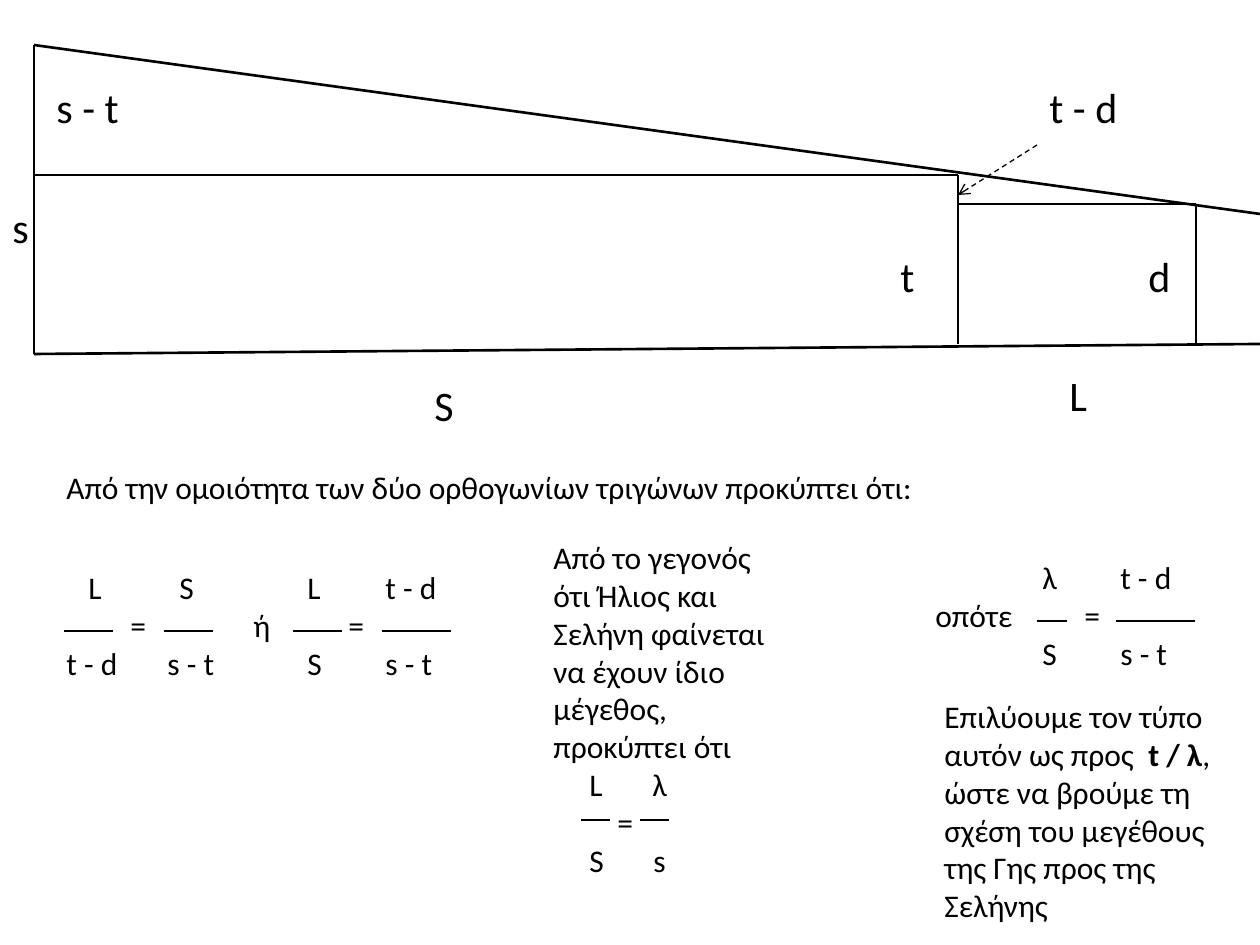
from lxml import etree
from pptx import Presentation
from pptx.dml.color import RGBColor
from pptx.enum.dml import MSO_LINE
from pptx.enum.shapes import MSO_CONNECTOR
from pptx.enum.text import MSO_AUTO_SIZE
from pptx.oxml.ns import qn
from pptx.util import Emu, Pt

STRAIGHT = MSO_CONNECTOR.STRAIGHT
DASH = MSO_LINE.DASH
FIT_TEXT = MSO_AUTO_SIZE.SHAPE_TO_FIT_TEXT
BLACK = RGBColor(0, 0, 0)
FONT = "Calibri"
BODY_SIZE = 18
LABEL_SIZE = 24


def px(length):
    """Turn slide pixels into EMU."""
    return Emu(round(length * 914400 / 126))


def add_line(slide, start, end, weight=1.5):
    """Draw a plain black line between two points."""
    line = slide.shapes.add_connector(STRAIGHT, *map(px, start + end))
    line.line.color.rgb = BLACK
    line.line.width = Pt(weight)
    etree.SubElement(line._element.spPr, qn("a:effectLst"))
    return line


def add_arrow(slide, start, end):
    """Draw a thin dashed arrow that points at its end."""
    arrow = add_line(slide, start, end, 0.75)
    arrow.line.dash_style = DASH
    etree.SubElement(arrow.line._ln, qn("a:tailEnd"), type="arrow")


def add_text(slide, box, paragraphs, size=BODY_SIZE):
    """Place a text box; each paragraph is a list of (text, bold) runs."""
    frame = slide.shapes.add_textbox(*map(px, box)).text_frame
    frame.word_wrap = True
    frame.auto_size = FIT_TEXT
    for index, runs in enumerate(paragraphs):
        paragraph = frame.add_paragraph() if index else frame.paragraphs[0]
        paragraph.font.name = FONT
        paragraph.font.size = Pt(size)
        paragraph.font.color.rgb = BLACK
        for text, bold in runs:
            run = paragraph.add_run()
            run.text = text
            if bold:
                run.font.bold = True
    return frame


def add_tab_stops(paragraph, stops):
    """Give a paragraph left tab stops ahead of its run defaults."""
    properties = paragraph._p.get_or_add_pPr()
    tab_list = etree.Element(qn("a:tabLst"))
    for stop in stops:
        etree.SubElement(tab_list, qn("a:tab"), pos=str(px(stop)), algn="l")
    properties.insert(0, tab_list)


def add_equation(slide, box, rows, bars, bar_y, intro=None):
    """Set rows of (offset, term) pairs on tab stops and draw fraction bars."""
    left, top = box[:2]
    paragraphs = [[(intro, False)]] if intro else []
    for row in rows:
        text = "".join(("\t" if offset else "") + term for offset, term in row)
        paragraphs.append([(text, False)])
    frame = add_text(slide, box, paragraphs)
    for paragraph, row in zip(frame.paragraphs[-len(rows):], rows):
        add_tab_stops(paragraph, [offset for offset, _ in row if offset])
    for start, end in bars:
        add_line(slide, (left + start, top + bar_y), (left + end, top + bar_y))


def add_diagram(slide, box):
    """Draw the shadow cone with its two similar triangles and labels."""
    left, top, width, height = box
    earth, moon = 924, 1162
    lines = [
        ((0, 309), (width, 299)),
        ((0, 0), (width, 169)),
        ((0, 0), (0, height)),
        ((earth, 130), (earth, 299)),
        ((moon, 159), (moon, 299)),
        ((earth, 130), (0, 130)),
        ((moon, 159), (earth, 159)),
    ]
    for start, end in lines:
        add_line(slide, (left + start[0], top + start[1]),
                 (left + end[0], top + end[1]))
    add_arrow(slide, (left + 1003, top + 100), (left + earth, top + 150))
    labels = [
        ("s", -34, 150, 49), ("S", 388, 328, 49), ("t", 854, 199, 49),
        ("d", 1102, 199, 49), ("L", 1023, 318, 49),
        ("s - t", 10, 30, 92), ("t - d", 1003, 30, 110),
    ]
    for label, x, y, label_width in labels:
        add_text(slide, (left + x, top + y, label_width, 64),
                 [[(label, False)]], LABEL_SIZE)


def add_similarity(slide, box):
    """State the proportion that follows from the similar triangles."""
    left, top, width, height = box
    add_text(slide, (left, top, 942, 50), [[(
        "Από την ομοιότητα των δύο ορθογωνίων τριγώνων προκύπτει ότι:", False)]])
    rows = [
        [(22, "L"), (113, "S"), (241, "L"), (319, "t - d")],
        [(64, "="), (187, "ή"), (282, "=")],
        [(0, "t - d"), (101, "s - t"), (241, "S"), (319, "s - t")],
    ]
    bars = [(10, 59), (110, 159), (239, 288), (328, 397)]
    add_equation(slide, (left, top + 100, width, height - 100), rows, bars, 69)


def add_apparent_size(slide, box):
    """State the proportion that follows from equal apparent sizes."""
    rows = [[(36, "L"), (99, "λ")], [(64, "=")], [(36, "S"), (100, "s")]]
    add_equation(slide, box, rows, [(40, 69), (99, 128)], 288,
                 "Από το γεγονός ότι Ήλιος και Σελήνη φαίνεται να έχουν "
                 "ίδιο μέγεθος, προκύπτει ότι")


def add_conclusion(slide, box):
    """Set the combined formula above the step that solves it."""
    left, top, width, height = box
    rows = [
        [(142, "λ"), (220, "t - d")],
        [(35, "οπότε"), (184, "=")],
        [(142, "S"), (220, "s - t")],
    ]
    add_equation(slide, (left, top, 328, 165), rows, [(149, 179), (228, 307)], 69)
    add_text(slide, (left + 44, top + 139, width - 44, height - 139), [[
        ("Επιλύουμε τον τύπο αυτόν ως προς  ", False),
        ("t / λ", True),
        (", ώστε να βρούμε τη σχέση του μεγέθους της Γης προς της Σελήνης", False),
    ]])


def main():
    """Build the slide and save it."""
    deck = Presentation()
    deck.slide_width, deck.slide_height = px(1260), px(945)
    slide = deck.slides.add_slide(deck.slide_layouts[6])
    add_diagram(slide, (34, 45, 1226, 309))
    add_similarity(slide, (54, 462, 427, 342))
    add_apparent_size(slide, (541, 532, 248, 357))
    add_conclusion(slide, (888, 552, 372, 381))
    deck.save("out.pptx")


if __name__ == "__main__":
    main()
